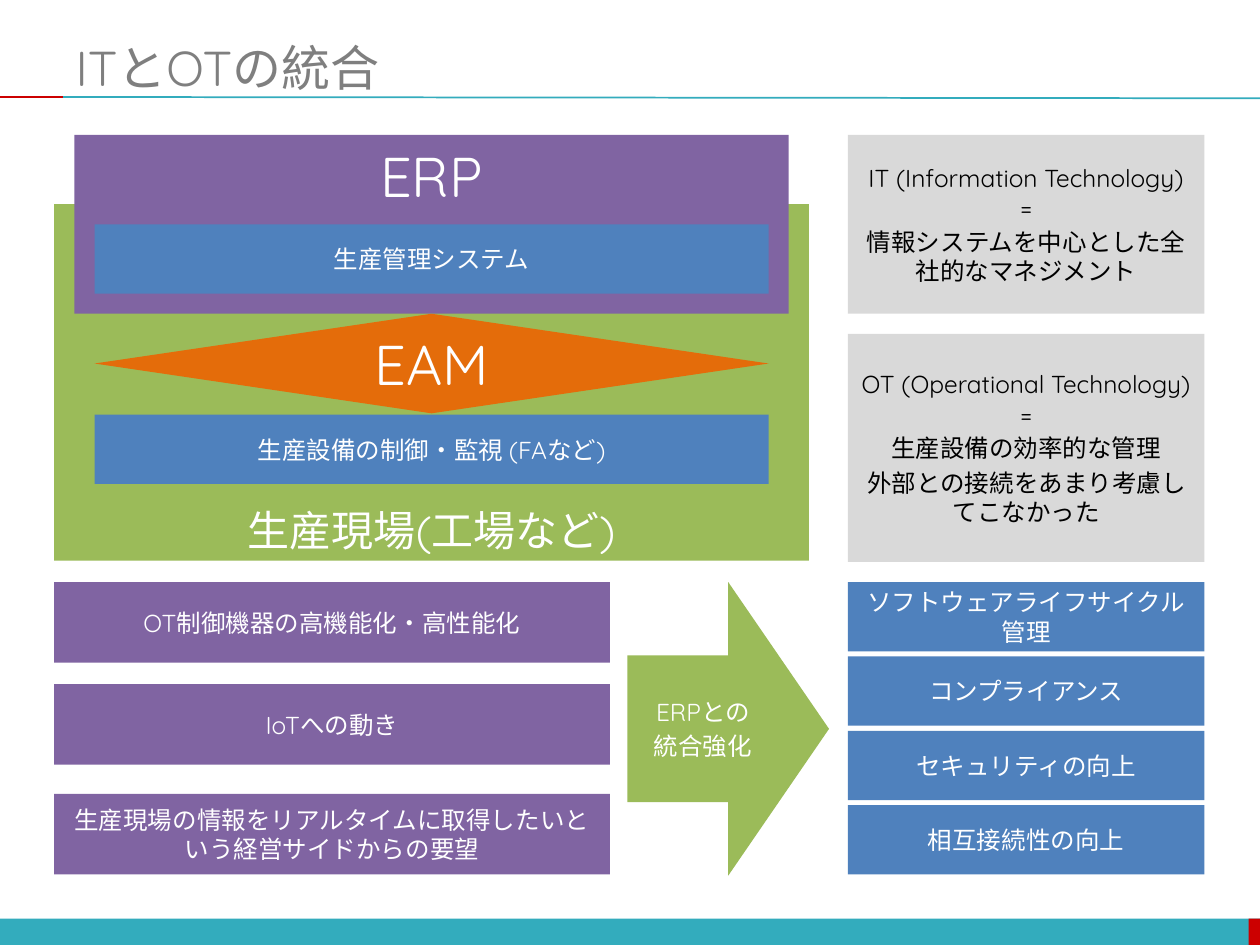
from lxml import etree
from pptx import Presentation
from pptx.dml.color import RGBColor
from pptx.enum.shapes import MSO_CONNECTOR, MSO_SHAPE
from pptx.enum.text import MSO_ANCHOR, PP_ALIGN
from pptx.oxml.ns import qn
from pptx.util import Inches, Pt

RECT, RIGHT_ARROW = MSO_SHAPE.RECTANGLE, MSO_SHAPE.RIGHT_ARROW
UP_DOWN_ARROW = MSO_SHAPE.UP_DOWN_ARROW
TOP, MIDDLE, BOTTOM = MSO_ANCHOR.TOP, MSO_ANCHOR.MIDDLE, MSO_ANCHOR.BOTTOM
LEFT, CENTER = PP_ALIGN.LEFT, PP_ALIGN.CENTER
STRAIGHT = MSO_CONNECTOR.STRAIGHT
FONT = "Quicksand"
COLORS = {
    "teal": "33ACBD", "red": "CC0000", "green": "9BBB59", "blue": "4F81BD",
    "purple": "8064A2", "orange": "E46C0A", "light": "D9D9D9",
    "gray": "7F7F7F", "white": "FFFFFF", "black": "000000",
}


def rgb(name):
    return RGBColor.from_string(COLORS[name])


def write(frame, lines, size, color, align=CENTER, anchor=MIDDLE):
    frame.word_wrap = True
    frame.vertical_anchor = anchor
    frame.text = "\n".join(lines)
    for index, paragraph in enumerate(frame.paragraphs):
        paragraph.alignment = align
        paragraph.space_before = Pt(0.2 * size if index else 0)
        for run in paragraph.runs:
            run.font.name = FONT
            run.font.size = Pt(size)
            run.font.color.rgb = rgb(color)


def add_block(slide, box, fill, lines=(), size=14, color="white",
              kind=RECT, anchor=MIDDLE):
    block = slide.shapes.add_shape(kind, *map(Inches, box))
    block.shadow.inherit = False
    block.fill.solid()
    block.fill.fore_color.rgb = rgb(fill)
    block.line.fill.background()
    if lines:
        write(block.text_frame, lines, size, color, anchor=anchor)
    return block


def add_rule(slide, start, end, color):
    rule = slide.shapes.add_connector(STRAIGHT, *map(Inches, start + end))
    rule.line.color.rgb = rgb(color)
    rule.line.width = Pt(1)
    etree.SubElement(rule._element.spPr, qn("a:effectLst"))


def add_frame(slide, title):
    # Footer bar, title and the rule under it
    add_block(slide, (0, 7.29, 10, 0.22), "teal")
    add_block(slide, (9.91, 7.29, 0.1, 0.22), "red")
    add_rule(slide, (0.5, 0.77), (10, 0.78), "teal")
    add_rule(slide, (0, 0.77), (0.5, 0.77), "red")
    heading = slide.shapes.title
    heading.left, heading.top = Inches(0.5), Inches(0.3)
    heading.width, heading.height = Inches(9.5), Inches(0.46)
    write(heading.text_frame, [title], 28, "gray", LEFT)


def add_systems(slide, left, top, width, height):
    # Factory floor below, ERP above, EAM linking the two
    inner_left, inner_width = left + 0.32, width - 0.64
    add_block(slide, (left, top + 0.55, width, height - 0.55), "green",
              ["生産現場(工場など)"], 24, anchor=BOTTOM)
    add_block(slide, (inner_left, top + 2.22, inner_width, 0.55), "blue",
              ["生産設備の制御・監視 (FAなど)"])
    add_block(slide, (left + 0.16, top, width - 0.32, 1.42), "purple",
              ["ERP"], 32, anchor=TOP)
    add_block(slide, (inner_left, top + 0.71, inner_width, 0.55), "blue",
              ["生産管理システム"])
    eam = add_block(slide, (inner_left, top + 1.42, inner_width, 0.79),
                    "orange", ["EAM"], 32, kind=UP_DOWN_ARROW)
    eam.adjustments[0], eam.adjustments[1] = 0.36, 0.27


def add_definitions(slide, left, top, width):
    # What IT and OT stand for
    add_block(slide, (left, top, width, 1.42), "light",
              ["IT (Information Technology) =",
               "情報システムを中心とした全社的なマネジメント"], color="black")
    add_block(slide, (left, top + 1.58, width, 1.81), "light",
              ["OT (Operational Technology) =", "生産設備の効率的な管理",
               "外部との接続をあまり考慮してこなかった"], color="black")


def add_drivers(slide, left, top, width):
    # Reasons for change
    drivers = [
        (0, "OT制御機器の高機能化・高性能化"),
        (0.81, "IoTへの動き"),
        (1.68, "生産現場の情報をリアルタイムに取得したいという経営サイドからの要望"),
    ]
    for offset, driver in drivers:
        add_block(slide, (left, top + offset, width, 0.64), "purple", [driver])


def add_benefits(slide, left, top, width):
    # Results of the integration
    benefits = ["ソフトウェアライフサイクル管理", "コンプライアンス",
                "セキュリティの向上", "相互接続性の向上"]
    for row, benefit in enumerate(benefits):
        add_block(slide, (left, top + row * 0.59, width, 0.55), "blue",
                  [benefit])


def main():
    prs = Presentation()
    prs.slide_width, prs.slide_height = Inches(10), Inches(7.5)
    slide = prs.slides.add_slide(prs.slide_layouts[5])
    add_frame(slide, "ITとOTの統合")
    add_systems(slide, 0.43, 1.07, 5.99, 3.38)
    add_definitions(slide, 6.73, 1.07, 2.83)
    add_drivers(slide, 0.43, 4.62, 4.41)
    add_block(slide, (4.98, 4.62, 1.6, 2.33), "green",
              ["ERPとの", "統合強化"], kind=RIGHT_ARROW)
    add_benefits(slide, 6.73, 4.62, 2.83)
    prs.save("out.pptx")


if __name__ == "__main__":
    main()
